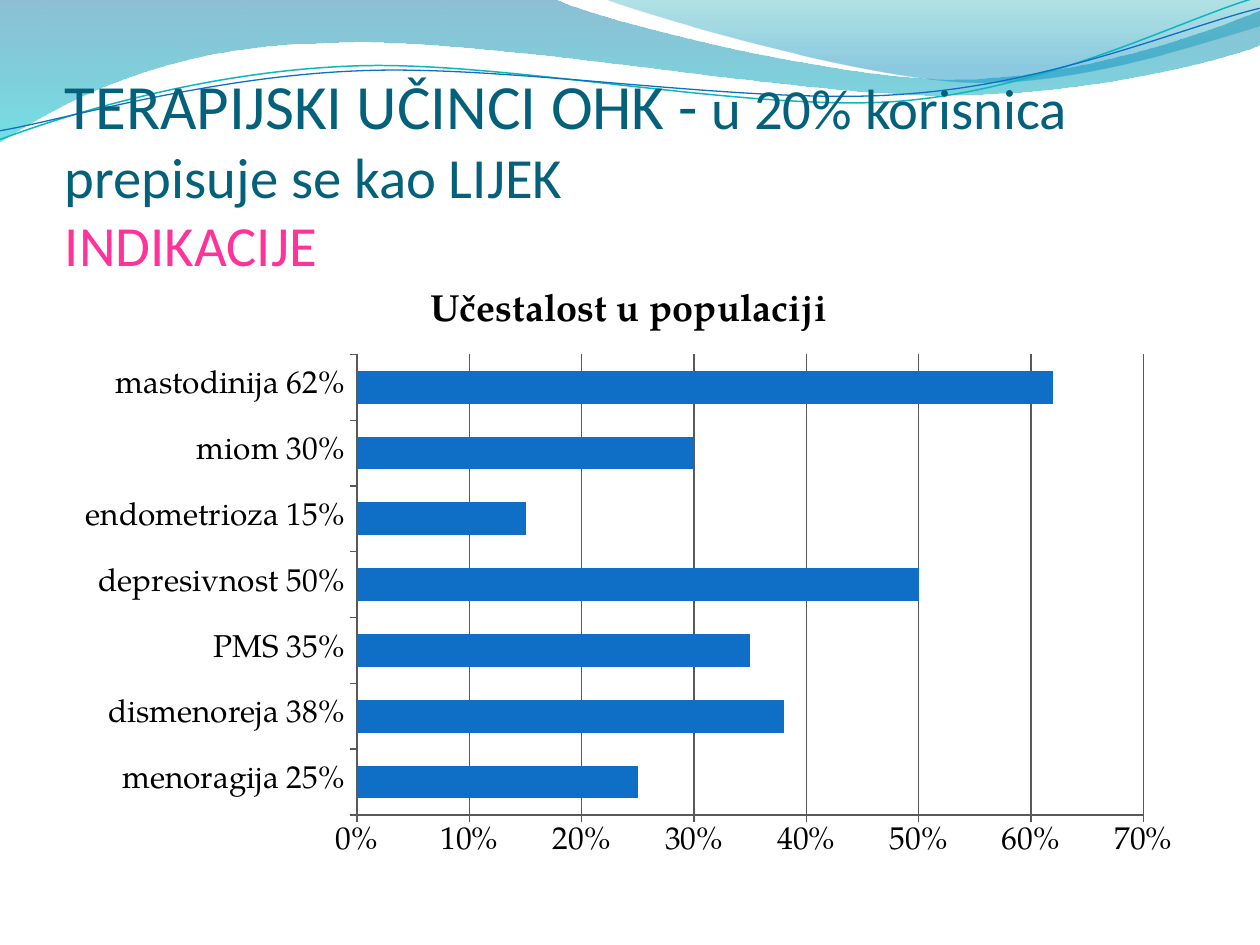
from dataclasses import dataclass

from lxml.etree import Element, SubElement
from pptx import Presentation
from pptx.chart.data import CategoryChartData
from pptx.dml.color import RGBColor
from pptx.enum.chart import XL_CHART_TYPE, XL_TICK_MARK
from pptx.enum.text import MSO_ANCHOR, MSO_AUTO_SIZE, PP_ALIGN
from pptx.oxml.ns import qn
from pptx.util import Pt

SCALE = 914400 / 126  # EMU in one px
RIPPLE_TILT = 357.3
TITLE_FONT = "Calibri"
CHART_FONT = "TeX Gyre Pagella"
CHART_TITLE = "Učestalost u populaciji"

FREQUENCIES = {
    "menoragija 25%": 0.25,
    "dismenoreja 38%": 0.38,
    "PMS 35%": 0.35,
    "depresivnost 50%": 0.5,
    "endometrioza 15%": 0.15,
    "miom 30%": 0.3,
    "mastodinija 62%": 0.62,
}


@dataclass
class Stop:
    position: float
    color: str
    opacity: int


@dataclass
class Band:
    """A closed wave; a segment holds one point (line) or three (Bézier)."""
    segments: list
    stops: list


@dataclass
class Ripple:
    """An open wavy line, given before it is tilted."""
    segments: list
    color: str
    width: float


BANDS = [
    Band([[(0, 0)], [(554, -1)],
          [(600, 21), (837, 79), (955, 79)],
          [(1075, 79), (1207, 33), (1260, 11)], [(1261, 45)],
          [(1239, 55), (1096, 96), (940, 95)],
          [(784, 95), (481, 35), (324, 43)],
          [(163, 45), (58, 105), (-1, 142)]],
         [Stop(0, "0074A1", 45), Stop(1, "00C6CF", 55)]),
    Band([[(604, -1)],
          [(641, 14), (859, 78), (969, 82)],
          [(1079, 86), (1211, 40), (1260, 26)], [(1260, 0)]],
         [Stop(0, "00A1A9", 30), Stop(0.8, "008BBF", 45)]),
]
RIPPLES = [
    Ripple([[(-3, 110)],
            [(59, 90), (199, 52), (350, 53)],
            [(499, 53), (745, 118), (896, 114)],
            [(1049, 109), (1184, 45), (1260, 27)]], "0AB8BF", 0.85),
    Ripple([[(-2, 101)],
            [(57, 94), (207, 57), (357, 58)],
            [(509, 58), (750, 112), (902, 107)],
            [(1052, 104), (1188, 52), (1262, 38)]], "0F6FC6", 0.75),
]


def px(value: float) -> int:
    return round(value * SCALE)


def rgb(color: str) -> RGBColor:
    return RGBColor.from_string(color)


def set_all(target, values: dict) -> None:
    for name, value in values.items():
        setattr(target, name, value)


def draw_outline(shapes, segments: list, close: bool):
    """Join the end points with lines, then bend the Bézier segments."""
    ends = [(px(segment[-1][0]), px(segment[-1][1])) for segment in segments]
    builder = shapes.build_freeform(*ends[0])
    builder.add_line_segments(ends[1:], close=close)
    shape = builder.convert_to_shape()
    shape.shadow.inherit = False
    left, top = (min(values) for values in zip(*ends))
    lines = list(shape._element.iter(qn("a:lnTo")))
    for line, segment in zip(lines, segments[1:]):
        if len(segment) == 3:
            curve = Element(qn("a:cubicBezTo"))
            for x, y in segment:
                SubElement(curve, qn("a:pt"), x=str(px(x) - left), y=str(px(y) - top))
            line.getparent().replace(line, curve)
    return shape


def draw_band(shapes, band: Band) -> None:
    shape = draw_outline(shapes, band.segments, True)
    shape.line.fill.background()
    shape.fill.gradient()
    shape.fill.gradient_angle = 270
    for target, stop in zip(shape.fill.gradient_stops, band.stops):
        target.position = stop.position
        target.color.rgb = rgb(stop.color)
    for node, stop in zip(shape._element.iter(qn("a:srgbClr")), band.stops):
        SubElement(node, qn("a:alpha"), val=str(stop.opacity * 1000))


def draw_ripple(shapes, ripple: Ripple) -> None:
    shape = draw_outline(shapes, ripple.segments, False)
    shape.rotation = RIPPLE_TILT
    shape.fill.background()
    shape.line.color.rgb = rgb(ripple.color)
    shape.line.width = Pt(ripple.width)


def add_span(para, text: str, size: float, color: str) -> None:
    span = para.add_run()
    span.text = text
    set_all(span.font, {"name": TITLE_FONT, "size": Pt(size)})
    span.font.color.rgb = rgb(color)


def write_title(page) -> None:
    box = page.shapes.title
    set_all(box, {"left": px(65), "top": px(55), "width": px(1134), "height": px(297)})
    set_all(box.text_frame, {
        "word_wrap": True, "auto_size": MSO_AUTO_SIZE.NONE,
        "vertical_anchor": MSO_ANCHOR.BOTTOM,
        "margin_left": 0, "margin_right": 0, "margin_top": px(6), "margin_bottom": px(74),
    })
    para = box.text_frame.paragraphs[0]
    para.alignment = PP_ALIGN.LEFT
    add_span(para, "TERAPIJSKI UČINCI OHK -", 36, "04617B")
    add_span(para, " u 20% korisnica prepisuje se kao LIJEK", 32.4, "04617B")
    para.add_line_break()
    add_span(para, "INDIKACIJE", 32.4, "FF3399")
    # Bring the title in front of the waves
    page.shapes._spTree.append(box._element)


def draw_chart(page) -> None:
    data = CategoryChartData(number_format="0%")
    data.categories = list(FREQUENCIES)
    data.add_series(CHART_TITLE, list(FREQUENCIES.values()))
    chart = page.shapes.add_chart(XL_CHART_TYPE.BAR_STACKED, px(63), px(264),
                                  px(1132), px(607), data).chart
    chart.has_legend = False
    set_all(chart.font, {"name": CHART_FONT, "size": Pt(18)})
    chart.font.color.rgb = rgb("000000")

    # Heading
    chart.has_title = True
    chart.chart_title.include_in_layout = False
    chart.chart_title.text_frame.text = CHART_TITLE
    heading = chart.chart_title.text_frame.paragraphs[0].runs[0].font
    set_all(heading, {"name": CHART_FONT, "size": Pt(21.6), "bold": True})
    heading.color.rgb = rgb("000000")

    # Bars
    plot = chart.plots[0]
    set_all(plot, {"gap_width": 100, "overlap": 100, "vary_by_categories": False})
    fill = plot.series[0].format.fill
    fill.solid()
    fill.fore_color.rgb = rgb("0F6FC6")

    # Axes and grid
    values, categories = chart.value_axis, chart.category_axis
    set_all(values, {"minimum_scale": 0, "maximum_scale": 0.7, "major_unit": 0.1,
                     "has_major_gridlines": True})
    set_all(values.tick_labels, {"number_format": "0%", "number_format_is_linked": False})
    for axis in (values, categories):
        axis.major_tick_mark = XL_TICK_MARK.OUTSIDE
    for part in (values, categories, values.major_gridlines):
        part.format.line.color.rgb = rgb("595959")
        part.format.line.width = Pt(0.75)


def main() -> None:
    deck = Presentation()
    set_all(deck, {"slide_width": px(1260), "slide_height": px(945)})
    page = deck.slides.add_slide(deck.slide_layouts[5])
    for band in BANDS:
        draw_band(page.shapes, band)
    ripple_group = page.shapes.add_group_shape()
    for ripple in RIPPLES:
        draw_ripple(ripple_group.shapes, ripple)
    write_title(page)
    draw_chart(page)
    deck.save("out.pptx")


if __name__ == "__main__":
    main()
